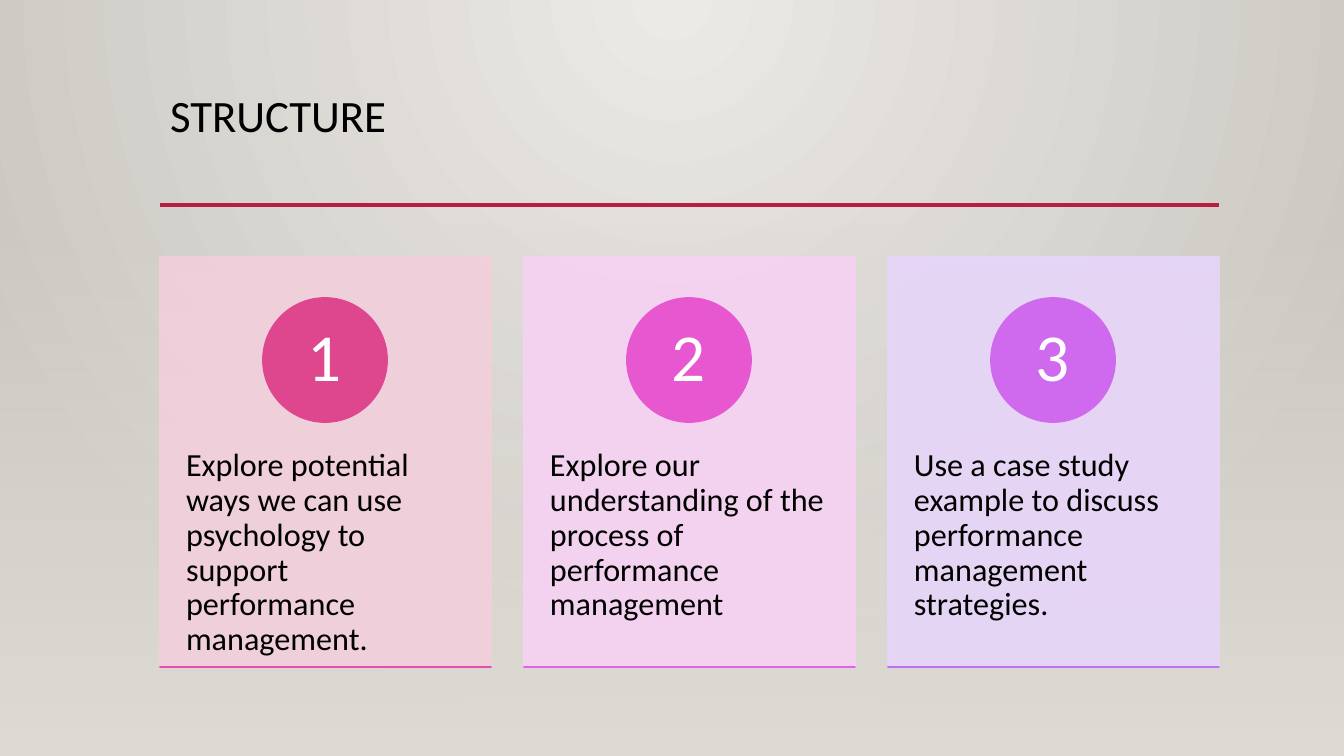
from lxml import etree
from pptx import Presentation
from pptx.dml.color import RGBColor
from pptx.enum.shapes import MSO_CONNECTOR as Connector, MSO_SHAPE as Shape
from pptx.enum.text import MSO_ANCHOR as Anchor, PP_ALIGN as Align
from pptx.oxml.ns import qn
from pptx.util import Pt

EMU_PER_PX = 914400 / 100.8
SLIDE_WIDTH, SLIDE_HEIGHT = 1344, 756
LEFT, CONTENT_WIDTH = 160, 1059
CARD_TOP, CARD_WIDTH, CARD_HEIGHT, CARD_STEP = 257, 331, 410, 364
CIRCLE_SIZE, CIRCLE_DROP, NUMBER_INSET = 124, 41, 18

COLORS = {
    "glow": "ECEAE7",
    "edge": "CAC7C1",
    "floor": "DFDBD5",
    "accent": "B71E42",
    "ink": "000000",
    "white": "FFFFFF",
}
CARDS = [
    ("Explore potential ways we can use psychology to support performance management.",
     {"panel": "F2CFDB", "circle": "DE478E", "base": "E24FB0"}),
    ("Explore our understanding of the process of performance management",
     {"panel": "F6D2F3", "circle": "E657D0", "base": "E560EA"}),
    ("Use a case study example to discuss performance management strategies.",
     {"panel": "E7D5F9", "circle": "CF69ED", "base": "BC72F0"}),
]


def px(*lengths):
    return [round(length * EMU_PER_PX) for length in lengths]


def set_format(target, values):
    for name, value in values.items():
        setattr(target, name, value)


def set_alpha(element, percent):
    for color in element.iter(qn("a:srgbClr")):
        etree.SubElement(color, qn("a:alpha"), val=str(percent * 1000))


def set_gradient(fill, owner, stops, direction, attributes):
    fill.gradient()
    gradient = next(owner.iter(qn("a:gradFill")))
    for child in list(gradient):
        gradient.remove(child)
    stop_list = etree.SubElement(gradient, qn("a:gsLst"))
    for position, (color, alpha) in zip((0, 100), stops):
        stop = etree.SubElement(stop_list, qn("a:gs"), pos=str(position * 1000))
        etree.SubElement(stop, qn("a:srgbClr"), val=COLORS[color])
        set_alpha(stop, alpha)
    return etree.SubElement(gradient, qn(direction), attributes)


def add_backdrop(slide):
    glow = set_gradient(slide.background.fill, slide.element,
                        [("glow", 100), ("edge", 100)], "a:path", {"path": "circle"})
    etree.SubElement(glow, qn("a:fillToRect"), l="43000", t="0", r="43000", b="100000")
    floor = slide.shapes.add_shape(Shape.RECTANGLE, *px(0, 223, SLIDE_WIDTH, 533))
    floor.shadow.inherit = False
    floor.line.fill.background()
    set_gradient(floor.fill, floor.element, [("floor", 0), ("floor", 100)],
                 "a:lin", {"ang": "5400000", "scaled": "0"})


def add_block(slide, preset, box, color, alpha=100):
    block = slide.shapes.add_shape(preset, *px(*box))
    block.shadow.inherit = False
    block.fill.solid()
    block.fill.fore_color.rgb = RGBColor.from_string(color)
    block.line.color.rgb = RGBColor.from_string(color)
    block.line.width = Pt(1.25)
    if alpha < 100:
        set_alpha(block.element.spPr, alpha)


def add_text(slide, text, box, size, color, insets, anchor=Anchor.TOP, align=Align.LEFT):
    textbox = slide.shapes.add_textbox(*px(*box))
    frame = textbox.text_frame
    side, end = px(*insets)
    set_format(frame, {"word_wrap": True, "vertical_anchor": anchor,
                       "margin_left": side, "margin_right": side,
                       "margin_top": end, "margin_bottom": end})
    paragraph = frame.paragraphs[0]
    set_format(paragraph, {"text": text, "alignment": align, "line_spacing": 0.9})
    font = paragraph.runs[0].font
    set_format(font, {"name": "Calibri", "size": Pt(size)})
    font.color.rgb = RGBColor.from_string(COLORS[color])


def add_title_rule(slide):
    rule = slide.shapes.add_connector(
        Connector.STRAIGHT, *px(LEFT, 205, LEFT + CONTENT_WIDTH, 205))
    rule.line.color.rgb = RGBColor.from_string(COLORS["accent"])
    rule.line.width = Pt(2.5)
    etree.SubElement(rule.element.spPr, qn("a:effectLst"))


def add_card(slide, index, text, tints):
    left = LEFT + index * CARD_STEP
    circle_left = left + (CARD_WIDTH - CIRCLE_SIZE) // 2
    circle_top = CARD_TOP + CIRCLE_DROP
    number_size = CIRCLE_SIZE - 2 * NUMBER_INSET
    add_block(slide, Shape.RECTANGLE, (left, CARD_TOP, CARD_WIDTH, CARD_HEIGHT),
              tints["panel"], 90)
    add_text(slide, text, (left, 413, CARD_WIDTH, 246), 23, "ink", (26, 36))
    add_block(slide, Shape.OVAL, (circle_left, circle_top, CIRCLE_SIZE, CIRCLE_SIZE),
              tints["circle"])
    add_text(slide, str(index + 1),
             (circle_left + NUMBER_INSET, circle_top + NUMBER_INSET, number_size, number_size),
             48, "white", (10, 1), Anchor.MIDDLE, Align.CENTER)
    add_block(slide, Shape.RECTANGLE, (left, CARD_TOP + CARD_HEIGHT, CARD_WIDTH, 0),
              tints["base"])


def main():
    presentation = Presentation()
    width, height = px(SLIDE_WIDTH, SLIDE_HEIGHT)
    set_format(presentation, {"slide_width": width, "slide_height": height})
    slide = presentation.slides.add_slide(presentation.slide_layouts[6])
    add_backdrop(slide)
    add_text(slide, "STRUCTURE", (LEFT, 89, CONTENT_WIDTH, 116), 32, "ink", (10, 5))
    add_title_rule(slide)
    for index, (text, tints) in enumerate(CARDS):
        add_card(slide, index, text, tints)
    presentation.save("out.pptx")


if __name__ == "__main__":
    main()
